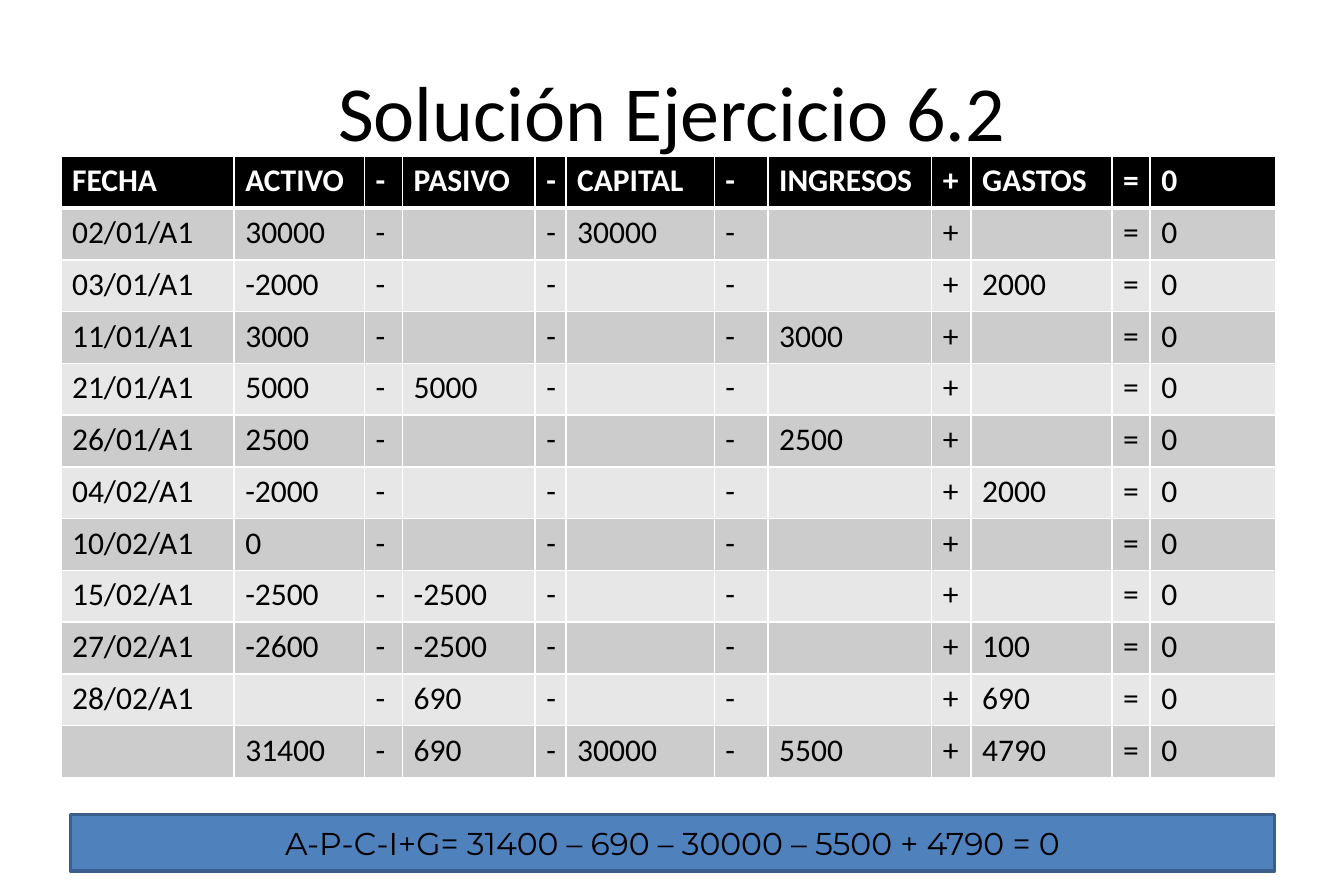
from lxml.etree import SubElement
from pptx import Presentation
from pptx.dml.color import RGBColor
from pptx.enum.shapes import MSO_SHAPE
from pptx.enum.text import MSO_ANCHOR, PP_ALIGN
from pptx.oxml.ns import qn
from pptx.util import Pt

OPERATORS = ["-", "-", "-", "+", "="]
HEADINGS = ["ACTIVO", "PASIVO", "CAPITAL", "INGRESOS", "GASTOS"]
ENTRIES = [
    ("02/01/A1", "30000", "", "30000", "", ""),
    ("03/01/A1", "-2000", "", "", "", "2000"),
    ("11/01/A1", "3000", "", "", "3000", ""),
    ("21/01/A1", "5000", "5000", "", "", ""),
    ("26/01/A1", "2500", "", "", "2500", ""),
    ("04/02/A1", "-2000", "", "", "", "2000"),
    ("10/02/A1", "0", "", "", "", ""),
    ("15/02/A1", "-2500", "-2500", "", "", ""),
    ("27/02/A1", "-2600", "-2500", "", "", "100"),
    ("28/02/A1", "", "690", "", "", "690"),
    ("", "31400", "690", "30000", "5500", "4790"),
]
COLUMN_WIDTHS = [104.4, 78.5, 23, 79.9, 18.7, 89.3, 32.4, 98.6, 23.8, 85, 23, 75.6]
ROW_HEIGHT = 31.2


def color(value):
    """Turn a hex string into a colour."""
    return RGBColor.from_string(value)


def place(shape, box):
    """Move and size a shape to a box in points."""
    shape.left, shape.top, shape.width, shape.height = [Pt(length) for length in box]


def write(frame, text, size=19, font="Calibri", ink="000000", bold=False, align=PP_ALIGN.LEFT):
    """Put one formatted line of text into a text frame."""
    paragraph = frame.paragraphs[0]
    paragraph.alignment = align
    paragraph.font.size = Pt(size)
    if text:
        run = paragraph.add_run()
        run.text = text
        run.font.name = font
        run.font.size = Pt(size)
        run.font.bold = bold
        run.font.color.rgb = color(ink)


def add_border(cell, side, width):
    """Draw one white border of a table cell."""
    properties = cell._tc.get_or_add_tcPr()
    line = SubElement(properties, qn(f"a:ln{side}"), w=str(Pt(width)))
    fill = SubElement(line, qn("a:solidFill"))
    SubElement(fill, qn("a:srgbClr"), val="FFFFFF")


def equation_row(label, amounts):
    """Place the operators between the amounts and end with zero."""
    row = [label]
    for amount, operator in zip(amounts, OPERATORS):
        row += [amount, operator]
    return row + ["0"]


def add_title(slide, box):
    """Write the slide title."""
    title = slide.shapes.title
    place(title, box)
    frame = title.text_frame
    frame.word_wrap = True
    frame.vertical_anchor = MSO_ANCHOR.MIDDLE
    write(frame, "Solución Ejercicio 6.2", size=47, align=PP_ALIGN.CENTER)


def add_ledger(slide, box):
    """Build the table of entries under the accounting equation."""
    rows = [equation_row("FECHA", HEADINGS)]
    rows += [equation_row(label, amounts) for label, *amounts in ENTRIES]
    lengths = [Pt(length) for length in box]
    table = slide.shapes.add_table(len(rows), len(COLUMN_WIDTHS), *lengths).table
    for column, width in zip(table.columns, COLUMN_WIDTHS):
        column.width = Pt(width)
    for row_index, values in enumerate(rows):
        table.rows[row_index].height = Pt(ROW_HEIGHT)
        header = row_index == 0
        band = "000000" if header else ("E7E7E7", "CCCCCC")[row_index % 2]
        for column_index, value in enumerate(values):
            cell = table.cell(row_index, column_index)
            cell.margin_left = cell.margin_right = Pt(6.75)
            cell.margin_top = cell.margin_bottom = Pt(3.4)
            for side in "LRTB":
                add_border(cell, side, 3 if header and side == "B" else 1)
            cell.fill.solid()
            cell.fill.fore_color.rgb = color(band)
            write(cell.text_frame, value, ink="FFFFFF" if header else "000000", bold=header)


def add_result(slide, box):
    """Add the bar that checks the totals."""
    bar = slide.shapes.add_shape(MSO_SHAPE.RECTANGLE, *[Pt(length) for length in box])
    bar.shadow.inherit = False
    bar.fill.solid()
    bar.fill.fore_color.rgb = color("4F81BD")
    bar.line.color.rgb = color("3A5F8C")
    bar.line.width = Pt(2)
    frame = bar.text_frame
    frame.word_wrap = True
    frame.vertical_anchor = MSO_ANCHOR.MIDDLE
    write(frame, "A-P-C-I+G= 31400 – 690 – 30000 – 5500 + 4790 = 0",
          font="Montserrat", align=PP_ALIGN.CENTER)


def main():
    """Build and save the presentation."""
    presentation = Presentation()
    presentation.slide_width, presentation.slide_height = Pt(810), Pt(540)
    slide = presentation.slides.add_slide(presentation.slide_layouts[5])
    add_title(slide, (40.5, 21.6, 729, 90))
    add_ledger(slide, (36.7, 94.3, sum(COLUMN_WIDTHS), 12 * ROW_HEIGHT))
    add_result(slide, (42.5, 491, 725.8, 34))
    presentation.save("out.pptx")


if __name__ == "__main__":
    main()
